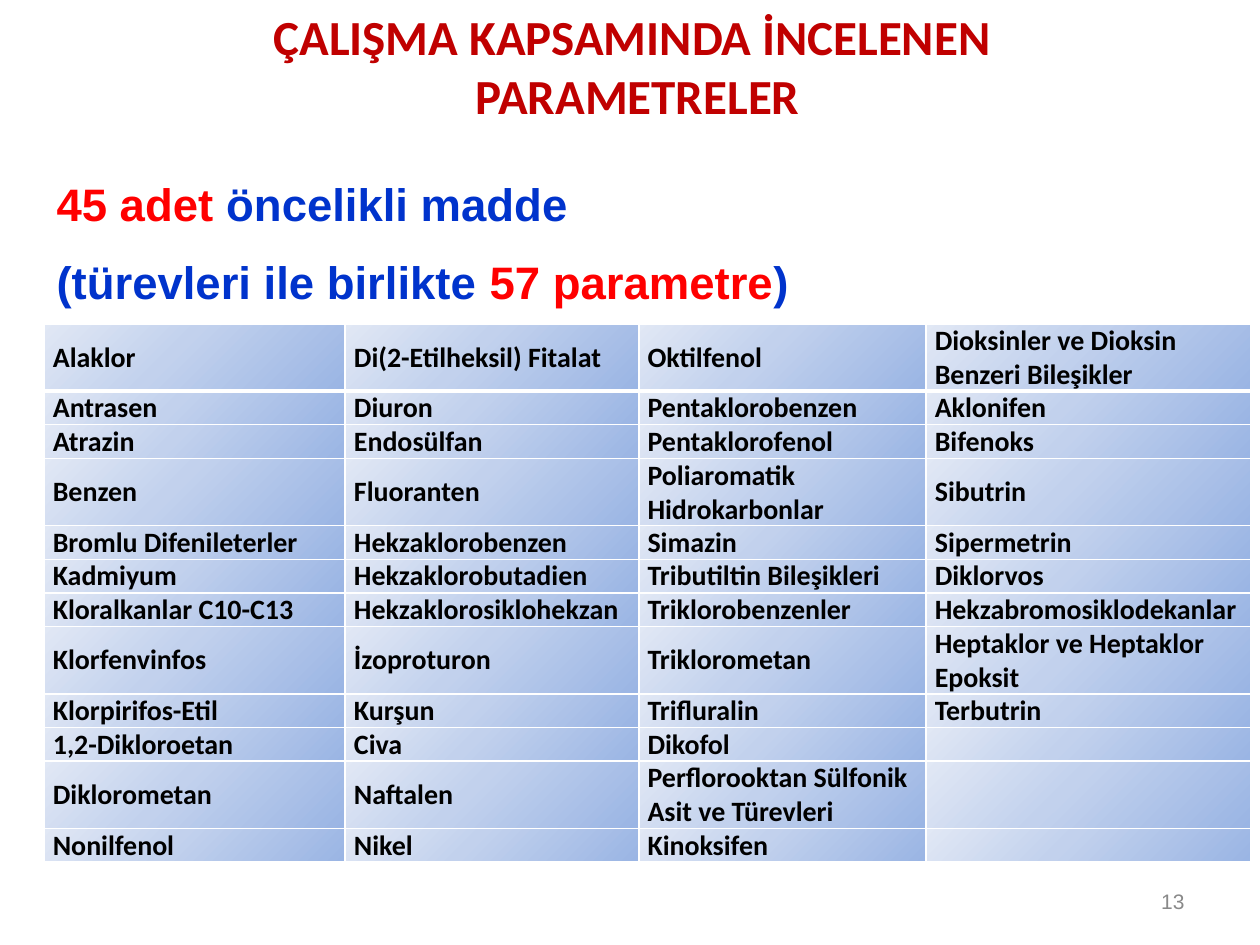
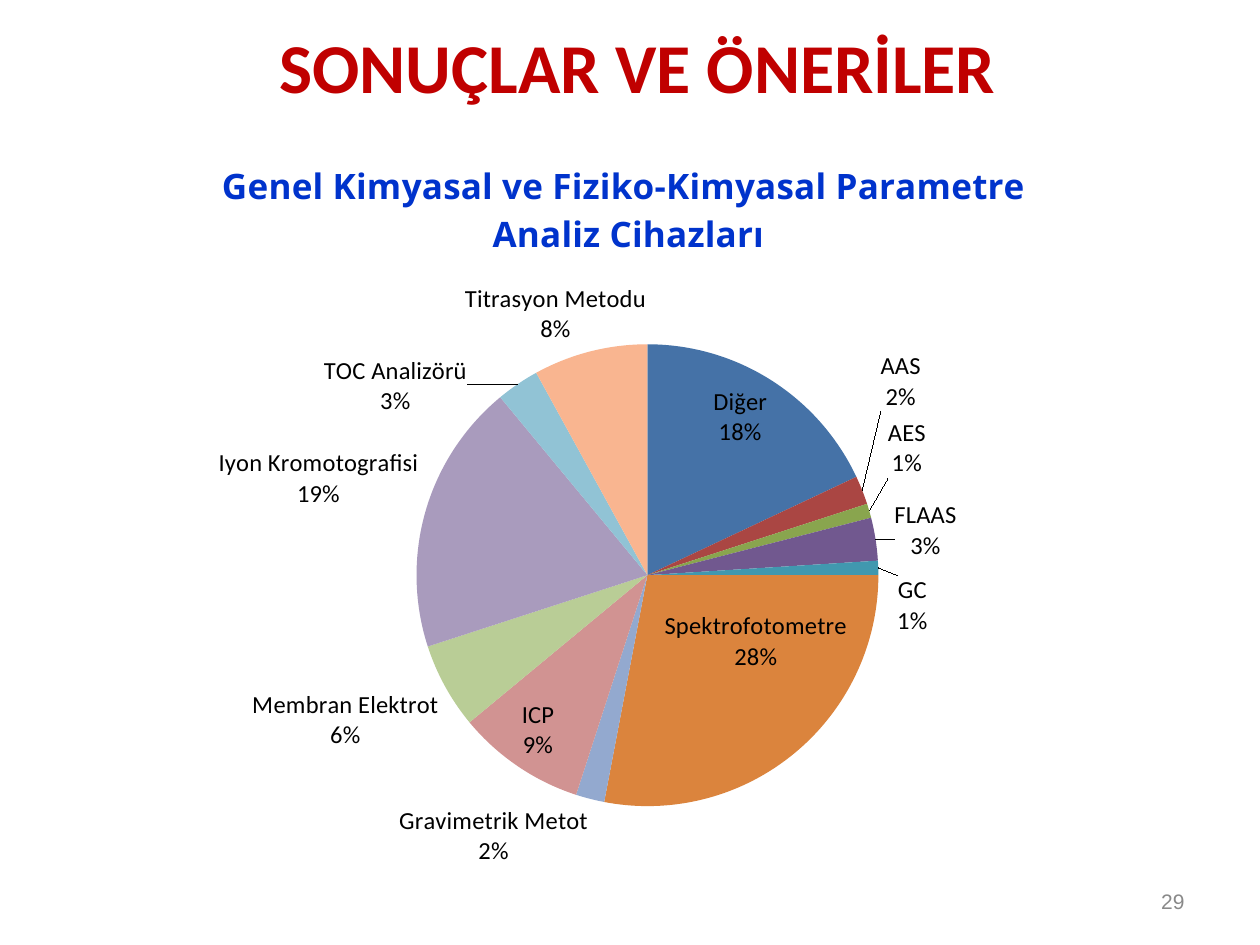
from dataclasses import dataclass
from typing import Optional

from lxml import etree
from pptx import Presentation
from pptx.chart.data import CategoryChartData
from pptx.dml.color import RGBColor
from pptx.enum.chart import XL_CHART_TYPE, XL_LABEL_POSITION
from pptx.enum.text import MSO_ANCHOR, MSO_AUTO_SIZE, PP_ALIGN
from pptx.oxml import parse_xml
from pptx.oxml.ns import nsdecls, qn
from pptx.util import Inches, Pt

COLORS = {
    "title": "C00000",
    "accent": "FF0000",
    "heading": "0033CC",
    "number": "898989",
    "text": "000000",
    "border": "FFFFFF",
}
CELL_GRADIENT = ((0, "9AB5E4"), (57, "C2D1ED"), (100, "E1E8F5"))
COLUMN_WIDTHS = (2.39, 2.33, 2.28, 2.58)
LINE_HEIGHT = 0.267
TWO_LINE_ROWS = (0, 3, 7, 10)
SUBSTANCE_COLUMNS = (
    ("Alaklor", "Antrasen", "Atrazin", "Benzen", "Bromlu Difenileterler", "Kadmiyum",
     "Kloralkanlar C10-C13", "Klorfenvinfos", "Klorpirifos-Etil", "1,2-Dikloroetan",
     "Diklorometan", "Nonilfenol"),
    ("Di(2-Etilheksil) Fitalat", "Diuron", "Endosülfan", "Fluoranten", "Hekzaklorobenzen",
     "Hekzaklorobutadien", "Hekzaklorosiklohekzan", "İzoproturon", "Kurşun", "Civa",
     "Naftalen", "Nikel"),
    ("Oktilfenol", "Pentaklorobenzen", "Pentaklorofenol", "Poliaromatik Hidrokarbonlar",
     "Simazin", "Tributiltin Bileşikleri", "Triklorobenzenler", "Triklorometan",
     "Trifluralin", "Dikofol", "Perflorooktan Sülfonik Asit ve Türevleri", "Kinoksifen"),
    ("Dioksinler ve Dioksin Benzeri Bileşikler", "Aklonifen", "Bifenoks", "Sibutrin",
     "Sipermetrin", "Diklorvos", "Hekzabromosiklodekanlar",
     "Heptaklor ve Heptaklor Epoksit", "Terbutrin", "", "", ""),
)


@dataclass
class Span:
    text: str
    color: str
    size: float
    font: str = "Calibri"
    bold: bool = True


@dataclass
class Slice:
    name: str
    percent: int
    color: str
    position: XL_LABEL_POSITION = XL_LABEL_POSITION.OUTSIDE_END
    offset: Optional[tuple[float, float]] = None


SLICES = (
    Slice("Diğer", 18, "4572A7", XL_LABEL_POSITION.INSIDE_END),
    Slice("AAS", 2, "AA4643", offset=(0.01, -0.1)),
    Slice("AES", 1, "89A54E", offset=(0.01, -0.04)),
    Slice("FLAAS", 3, "71588F", offset=(0.01, 0.03)),
    Slice("GC", 1, "4198AF", offset=(0.01, 0.05)),
    Slice("Spektrofotometre", 28, "DB843D", XL_LABEL_POSITION.CENTER, (0.03, -0.03)),
    Slice("Gravimetrik Metot", 2, "93A9CF"),
    Slice("ICP", 9, "D19392", XL_LABEL_POSITION.INSIDE_END),
    Slice("Membran Elektrot", 6, "B9CD96"),
    Slice("Iyon Kromotografisi", 19, "A99BBD"),
    Slice("TOC Analizörü", 3, "91C3D5", offset=(-0.04, 0.05)),
    Slice("Titrasyon Metodu", 8, "F9B590", offset=(0.05, 0)),
)


def style_font(font, span: Span) -> None:
    font.name = span.font
    font.size = Pt(span.size)
    font.bold = span.bold
    font.color.rgb = RGBColor.from_string(COLORS[span.color])


def add_span(para, span: Span) -> None:
    run = para.add_run()
    run.text = span.text
    style_font(run.font, span)


def add_box(page, left: float, top: float, width: float, height: float):
    box = page.shapes.add_textbox(Inches(left), Inches(top), Inches(width), Inches(height))
    box.text_frame.word_wrap = True
    return box.text_frame


def add_page(deck, title_lines: tuple[str, ...], title_size: float, number: str):
    """Add a page with its red title and grey page number."""
    page = deck.slides.add_slide(deck.slide_layouts[5])
    title = page.shapes.title
    title.left, title.top = Inches(0.12), Inches(-0.03)
    title.width, title.height = Inches(9.88), Inches(1.1)
    frame = title.text_frame
    frame.word_wrap = True
    frame.auto_size = MSO_AUTO_SIZE.NONE
    frame.vertical_anchor = MSO_ANCHOR.MIDDLE
    para = frame.paragraphs[0]
    para.alignment = PP_ALIGN.CENTER
    for index, line in enumerate(title_lines):
        if index:
            para.add_line_break()
        add_span(para, Span(line, "title", title_size))

    frame = add_box(page, 7.17, 6.95, 2.33, 0.4)
    frame.vertical_anchor = MSO_ANCHOR.MIDDLE
    para = frame.paragraphs[0]
    para.alignment = PP_ALIGN.RIGHT
    add_span(para, Span(number, "number", 12, "Arial", False))
    return page


def add_summary(page) -> None:
    lines = (
        (("45 adet ", "accent"), ("öncelikli madde", "heading")),
        (("(türevleri ile birlikte ", "heading"), ("57 parametre", "accent"), (")", "heading")),
    )
    frame = add_box(page, 0.35, 1.35, 9.29, 1.2)
    for index, line in enumerate(lines):
        para = frame.add_paragraph() if index else frame.paragraphs[0]
        para.alignment = PP_ALIGN.JUSTIFY
        para.space_after = Pt(6)
        if index:
            para.space_before = Pt(7)
        for text, color in line:
            add_span(para, Span(text, color, 26, "Arial"))


def paint_cell(cell, bottom_width: float) -> None:
    """Give a cell white borders and a gradient from its lower right corner."""
    properties = cell._tc.get_or_add_tcPr()
    for side in ("L", "R", "T", "B"):
        width = Pt(bottom_width if side == "B" else 1)
        properties.append(parse_xml(
            f'<a:ln{side} {nsdecls("a")} w="{width}"><a:solidFill>'
            f'<a:srgbClr val="{COLORS["border"]}"/></a:solidFill></a:ln{side}>'))
    stops = "".join(f'<a:gs pos="{pos * 1000}"><a:srgbClr val="{color}"/></a:gs>'
                    for pos, color in CELL_GRADIENT)
    properties.append(parse_xml(
        f'<a:gradFill {nsdecls("a")} rotWithShape="1"><a:gsLst>{stops}</a:gsLst>'
        '<a:path path="circle"><a:fillToRect l="100000" t="100000"/></a:path></a:gradFill>'))


def add_substance_table(page) -> None:
    rows = list(zip(*SUBSTANCE_COLUMNS))
    heights = [LINE_HEIGHT * (2 if index in TWO_LINE_ROWS else 1) for index in range(len(rows))]
    table = page.shapes.add_table(
        len(rows), len(COLUMN_WIDTHS), Inches(0.35), Inches(2.57),
        Inches(sum(COLUMN_WIDTHS)), Inches(sum(heights))).table
    table.first_row = table.horz_banding = False
    for column, width in zip(table.columns, COLUMN_WIDTHS):
        column.width = Inches(width)
    for row_index, names in enumerate(rows):
        table.rows[row_index].height = Inches(heights[row_index])
        for column_index, name in enumerate(names):
            cell = table.cell(row_index, column_index)
            cell.margin_left = cell.margin_right = Inches(0.07)
            cell.margin_top = cell.margin_bottom = 0
            cell.vertical_anchor = MSO_ANCHOR.MIDDLE
            paint_cell(cell, 1 if row_index else 3)
            para = cell.text_frame.paragraphs[0]
            if name:
                add_span(para, Span(name, "text", 16))
            else:
                etree.SubElement(para._p, qn("a:endParaRPr"), sz="1600")


def set_layout(parent, index: int, **values) -> None:
    """Write a manual chart layout, adding its element at index if missing."""
    layout = parent.find(qn("c:layout"))
    if layout is None:
        layout = parse_xml(f'<c:layout {nsdecls("c")}/>')
        parent.insert(index, layout)
    manual = etree.SubElement(layout, qn("c:manualLayout"))
    for tag, value in values.items():
        etree.SubElement(manual, qn(f"c:{tag}"), val=str(value))


def label_slice(point, piece: Slice) -> None:
    label = point.data_label
    style_font(label.font, Span("", "text", 14, bold=False))
    label.position = piece.position


def add_device_chart(page) -> None:
    data = CategoryChartData()
    data.categories = [piece.name for piece in SLICES]
    data.add_series("Series 1", [piece.percent for piece in SLICES])
    chart = page.shapes.add_chart(
        XL_CHART_TYPE.PIE, Inches(0.35), Inches(1.05), Inches(9.21), Inches(6.01), data).chart
    chart.has_legend = False
    style_font(chart.font, Span("", "text", 10, bold=False))

    frame = chart.chart_title.text_frame
    for index, line in enumerate(("Genel Kimyasal ve Fiziko-Kimyasal Parametre ",
                                  "Analiz Cihazları")):
        para = frame.add_paragraph() if index else frame.paragraphs[0]
        add_span(para, Span(line, "heading", 20, "Noto Sans"))

    plot = chart.plots[0]
    plot.vary_by_categories = True
    series = plot.series[0]
    labels = series.data_labels
    labels.show_value = False
    labels.show_category_name = labels.show_percentage = True
    for index, piece in enumerate(SLICES):
        point = series.points[index]
        point.format.fill.solid()
        point.format.fill.fore_color.rgb = RGBColor.from_string(piece.color)
        label_slice(point, piece)

    space = chart._chartSpace
    for label, piece in zip(space.xpath(".//c:dLbl"), SLICES):
        for tag, value in (("showVal", "0"), ("showCatName", "1"), ("showPercent", "1")):
            label.find(qn(f"c:{tag}")).set("val", value)
        etree.SubElement(label, qn("c:separator")).text = "\n"
        if piece.offset:
            set_layout(label, 1, x=piece.offset[0], y=piece.offset[1])
    set_layout(space.xpath(".//c:chart/c:title")[0], 1,
               xMode="edge", yMode="edge", x=0.15, y=0.03)
    set_layout(space.xpath(".//c:plotArea")[0], 0, layoutTarget="inner",
               xMode="edge", yMode="edge", x=0.32, y=0.28, w=0.4, h=0.61)


def main() -> None:
    deck = Presentation()
    deck.slide_width, deck.slide_height = Inches(10), Inches(7.5)

    page = add_page(deck, ("ÇALIŞMA KAPSAMINDA İNCELENEN ", "PARAMETRELER"), 28, "13")
    add_summary(page)
    add_substance_table(page)

    page = add_page(deck, ("SONUÇLAR VE ÖNERİLER",), 40, "29")
    add_device_chart(page)

    deck.save("out.pptx")


if __name__ == "__main__":
    main()
